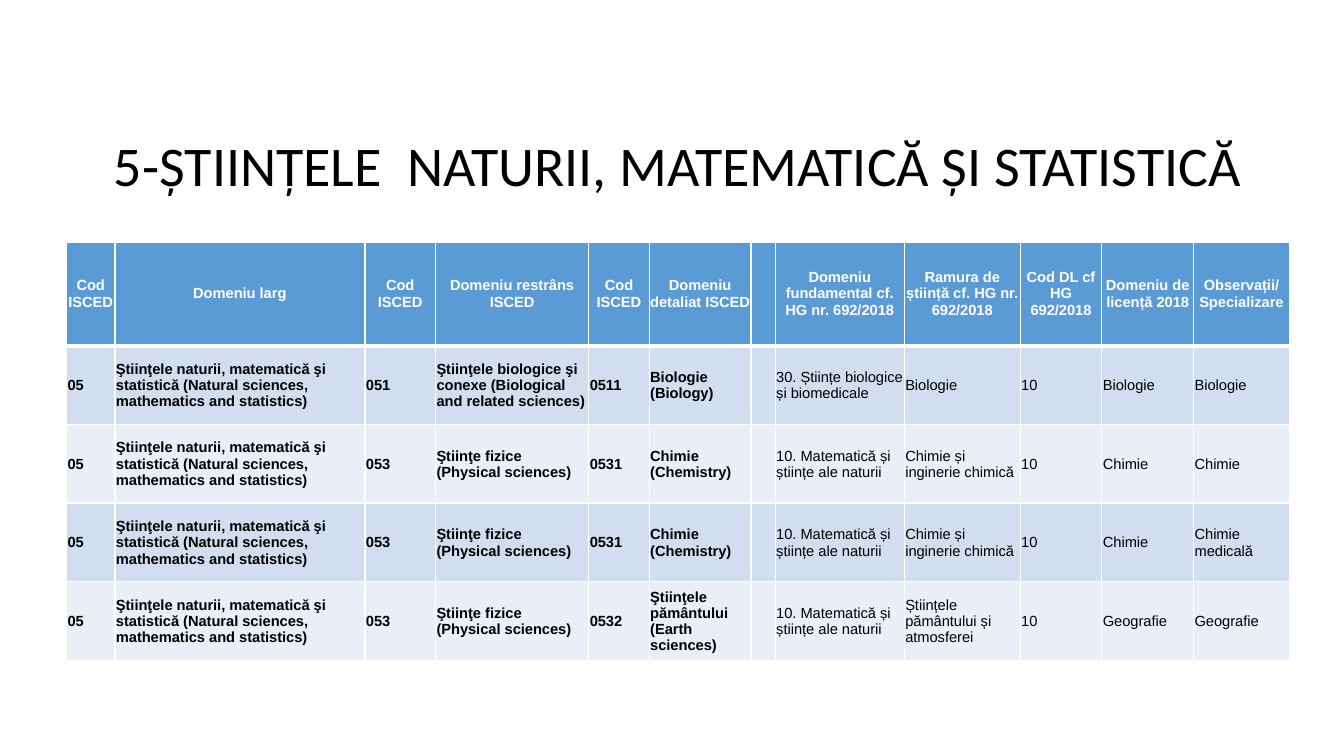
from dataclasses import dataclass

from lxml import etree
from pptx import Presentation
from pptx import util as u
from pptx.dml import color
from pptx.enum import text
from pptx.oxml import ns


@dataclass(frozen=True)
class Theme:
    heading_font: str = "Calibri"
    table_font: str = "Arial"
    heading_size: float = 40
    table_size: float = 10.5
    ink: str = "000000"
    white: str = "FFFFFF"
    header: str = "5B9BD5"
    bands: tuple[str, str] = ("D2DEEF", "EAEFF7")
    rule: float = 1
    header_rule: float = 3


@dataclass(frozen=True)
class Classification:
    narrow_code: str
    narrow_field: str
    detailed_code: str
    detailed_field: str
    fundamental: str
    branch: str
    degree_field: str
    remarks: str

    def cells(self) -> list[str]:
        return ["05", BROAD_FIELD, self.narrow_code, self.narrow_field,
                self.detailed_code, self.detailed_field, "", self.fundamental,
                self.branch, "10", self.degree_field, self.remarks]


THEME = Theme()
BROAD_FIELD = "Ştiinţele naturii, matematică şi statistică (Natural sciences, mathematics and statistics)"
PHYSICAL = "Ştiinţe fizice (Physical sciences)"
CHEMISTRY = "Chimie (Chemistry)"
MATHS_NATURE = "10. Matematică și științe ale naturii"
CHEMICAL_BRANCH = "Chimie și inginerie chimică"

HEADINGS = ["Cod ISCED", "Domeniu larg", "Cod ISCED", "Domeniu restrâns ISCED",
            "Cod ISCED", "Domeniu detaliat ISCED", "",
            "Domeniu fundamental cf. HG nr. 692/2018",
            "Ramura de știință cf. HG nr. 692/2018", "Cod DL cf HG 692/2018",
            "Domeniu de licență 2018", "Observații/ Specializare"]
CLASSIFICATIONS = [
    Classification("051", "Ştiinţele biologice şi conexe (Biological and related sciences)",
                   "0511", "Biologie (Biology)", "30. Științe biologice și biomedicale",
                   "Biologie", "Biologie", "Biologie"),
    Classification("053", PHYSICAL, "0531", CHEMISTRY, MATHS_NATURE,
                   CHEMICAL_BRANCH, "Chimie", "Chimie"),
    Classification("053", PHYSICAL, "0531", CHEMISTRY, MATHS_NATURE,
                   CHEMICAL_BRANCH, "Chimie", "Chimie medicală"),
    Classification("053", PHYSICAL, "0532", "Ştiinţele pământului (Earth sciences)",
                   MATHS_NATURE, "Științele pământului și atmosferei",
                   "Geografie", "Geografie"),
]
COLUMN_WIDTHS = [0.48, 2.48, 0.7, 1.52, 0.6, 1.01, 0.24, 1.28, 1.15, 0.81, 0.91, 0.95]
ROW_HEIGHTS = [1.03] + [0.78] * len(CLASSIFICATIONS)
ISCED_COLUMNS = 6


def add_run(paragraph, words: str, font: str, size: float, ink: str, bold: bool) -> None:
    run = paragraph.add_run()
    run.text = words
    run.font.name = font
    run.font.size = u.Pt(size)
    run.font.bold = bold
    run.font.color.rgb = color.RGBColor.from_string(ink)


def add_borders(cell, top: float, bottom: float) -> None:
    properties = cell._tc.get_or_add_tcPr()
    sides = {"lnL": THEME.rule, "lnR": THEME.rule, "lnT": top, "lnB": bottom}
    for side, width in sides.items():
        line = etree.SubElement(properties, ns.qn(f"a:{side}"), w=str(u.Pt(width)))
        fill = etree.SubElement(line, ns.qn("a:solidFill"))
        etree.SubElement(fill, ns.qn("a:srgbClr"), val=THEME.white)


def fill_cell(cell, words: str, row: int, column: int) -> None:
    is_header = row == 0
    add_borders(cell, THEME.header_rule if row == 1 else THEME.rule,
                THEME.header_rule if is_header else THEME.rule)
    cell.fill.solid()
    background = THEME.header if is_header else THEME.bands[(row - 1) % 2]
    cell.fill.fore_color.rgb = color.RGBColor.from_string(background)
    inset = u.Inches(0 if is_header else 0.01)
    cell.margin_left = cell.margin_right = cell.margin_top = inset
    cell.margin_bottom = 0
    cell.vertical_anchor = text.MSO_ANCHOR.MIDDLE
    paragraph = cell.text_frame.paragraphs[0]
    paragraph.alignment = text.PP_ALIGN.CENTER if is_header else text.PP_ALIGN.LEFT
    if words:
        add_run(paragraph, words, THEME.table_font, THEME.table_size,
                THEME.white if is_header else THEME.ink,
                is_header or column < ISCED_COLUMNS)


def add_heading(slide) -> None:
    heading = slide.shapes.title
    heading.left, heading.top = u.Inches(0.97), u.Inches(1.31)
    heading.width, heading.height = u.Inches(11.5), u.Inches(0.72)
    frame = heading.text_frame
    frame.word_wrap = True
    frame.auto_size = text.MSO_AUTO_SIZE.NONE
    frame.vertical_anchor = text.MSO_ANCHOR.MIDDLE
    paragraph = frame.paragraphs[0]
    paragraph.alignment = text.PP_ALIGN.CENTER
    paragraph.line_spacing = 0.9
    add_run(paragraph, "5-ȘTIINȚELE  NATURII, MATEMATICĂ ȘI STATISTICĂ",
            THEME.heading_font, THEME.heading_size, THEME.ink, False)


def add_classification_table(slide) -> None:
    rows = [HEADINGS] + [entry.cells() for entry in CLASSIFICATIONS]
    table = slide.shapes.add_table(
        len(rows), len(HEADINGS), u.Inches(0.66), u.Inches(2.4),
        u.Inches(sum(COLUMN_WIDTHS)), u.Inches(sum(ROW_HEIGHTS))).table
    for column, width in zip(table.columns, COLUMN_WIDTHS):
        column.width = u.Inches(width)
    for row, height in zip(table.rows, ROW_HEIGHTS):
        row.height = u.Inches(height)
    for r, row_words in enumerate(rows):
        for c, words in enumerate(row_words):
            fill_cell(table.cell(r, c), words, r, c)


def main() -> None:
    deck = Presentation()
    deck.slide_width, deck.slide_height = u.Inches(13.33), u.Inches(7.5)
    slide = deck.slides.add_slide(deck.slide_layouts.get_by_name("Title Only"))
    add_heading(slide)
    add_classification_table(slide)
    deck.save("out.pptx")


if __name__ == "__main__":
    main()
